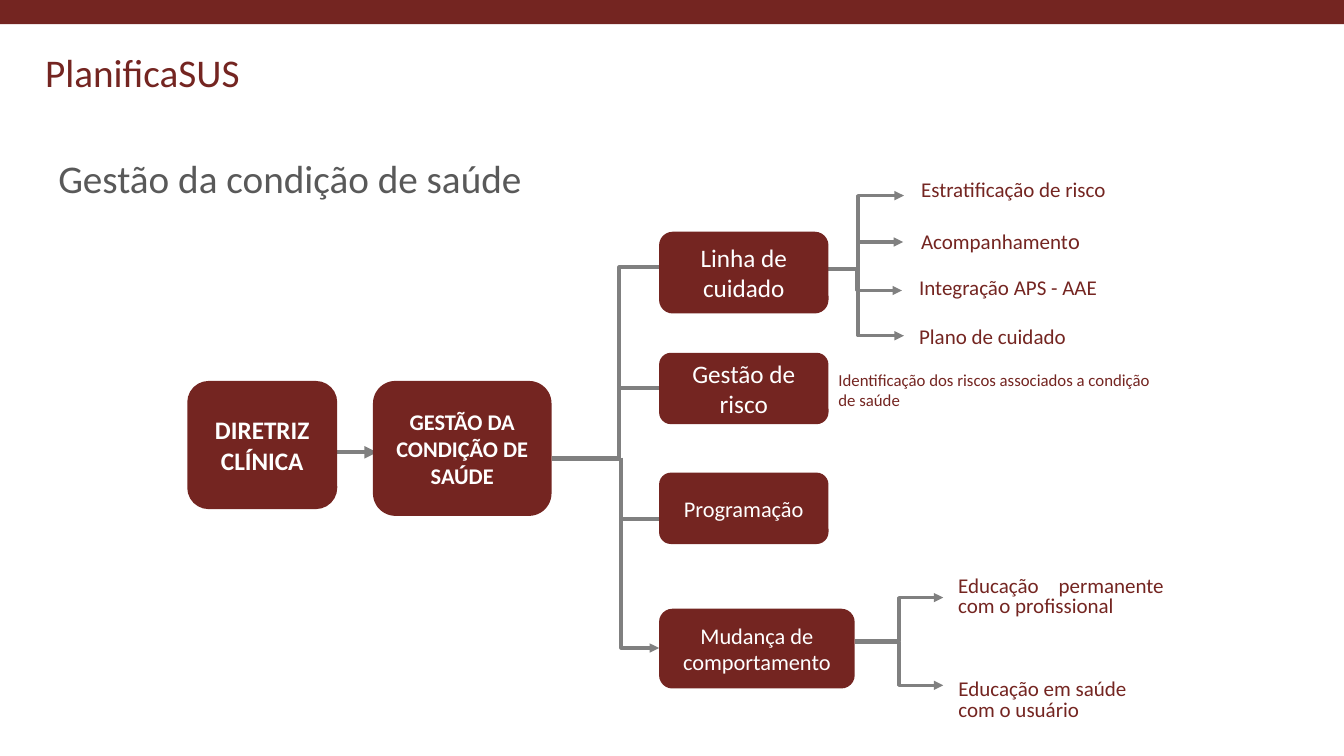
from dataclasses import dataclass

from lxml import etree
from pptx import Presentation
from pptx import util as u
from pptx.dml.color import RGBColor
from pptx.enum import shapes, text
from pptx.oxml.ns import qn


@dataclass(frozen=True)
class Theme:
    """Colours, font and type sizes."""
    font: str = "Calibri"
    wine: str = "742521"
    grey: str = "808080"
    dark: str = "595959"
    white: str = "FFFFFF"
    heading: int = 28
    large: int = 18
    medium: int = 16
    label: int = 15
    small: int = 12


def write(tf, runs, color, font, align="LEFT", bold=False, spacing=None,
          anchor="MIDDLE", wrap=True):
    """Write (text, size) runs as one formatted paragraph."""
    tf.word_wrap = wrap
    tf.vertical_anchor = getattr(text.MSO_ANCHOR, anchor)
    p = tf.paragraphs[0]
    p.alignment = getattr(text.PP_ALIGN, align)
    if spacing:
        p.line_spacing = spacing
    for content, size in runs:
        r = p.add_run()
        r.text = content
        r.font.name = font
        r.font.size = u.Pt(size)
        r.font.bold = bold
        r.font.color.rgb = RGBColor.from_string(color)


class Deck:
    """Hold the style and the current slide."""

    def __init__(self, prs, theme):
        self.theme = theme
        self.s = prs.slides.add_slide(prs.slide_layouts[6])

    def shape(self, kind, box, fill=None):
        """Add a borderless preset shape."""
        sp = self.s.shapes.add_shape(kind, *map(u.Cm, box))
        sp.shadow.inherit = False
        sp.line.fill.background()
        if fill:
            sp.fill.solid()
            sp.fill.fore_color.rgb = RGBColor.from_string(fill)
        else:
            sp.fill.background()
        return sp

    def bar(self, box):
        """Add the coloured band."""
        self.shape(shapes.MSO_SHAPE.RECTANGLE, box, self.theme.wine)

    def textbox(self, content, box, size, color, **fmt):
        """Add free text."""
        sp = self.s.shapes.add_textbox(*map(u.Cm, box))
        write(sp.text_frame, [(content, size)], color, self.theme.font, **fmt)

    def node(self, content, box, size, **fmt):
        """Add a filled box of the diagram."""
        sp = self.shape(shapes.MSO_SHAPE.ROUNDED_RECTANGLE, box, self.theme.wine)
        write(sp.text_frame, [(content, size)], self.theme.white,
              self.theme.font, align="CENTER", **fmt)

    def label(self, runs, box, **fmt):
        """Add an unfilled label at the end of a branch."""
        sp = self.shape(shapes.MSO_SHAPE.ROUNDED_RECTANGLE, box)
        write(sp.text_frame, runs, self.theme.wine, self.theme.font, **fmt)

    def arrow(self, start, end, bend=0.5, width=2.25):
        """Add an elbow arrow that turns at a share of its width."""
        cx = self.s.shapes.add_connector(
            shapes.MSO_CONNECTOR.ELBOW, *map(u.Cm, (*start, *end)))
        cx.line.width = u.Pt(width)
        cx.line.color.rgb = RGBColor.from_string(self.theme.grey)
        sp_pr = cx._element.spPr
        guides = sp_pr.find(qn("a:prstGeom")).get_or_add_avLst()
        etree.SubElement(guides, qn("a:gd"), name="adj1",
                         fmla=f"val {round(bend * 100000)}")
        etree.SubElement(cx.line._get_or_add_ln(), qn("a:tailEnd"), type="triangle")
        etree.SubElement(sp_pr, qn("a:effectLst"))


def main():
    """Build and save the slide."""
    prs = Presentation()
    prs.slide_width, prs.slide_height = u.Cm(33.87), u.Cm(19.05)
    t = Theme()
    d = Deck(prs, t)

    d.textbox("PlanificaSUS", (0.89, 1.09, 5.46, 1.45), t.heading, t.wine,
              anchor="TOP", wrap=False)
    d.bar((0, 0, 33.87, 0.61))
    d.textbox("Gestão da condição de saúde", (1.22, 2.72, 27.91, 3.68),
              t.heading, t.dark, spacing=0.9)

    d.arrow((7.47, 12.57), (9.5, 11.4), bend=0.37, width=3)
    for start, end, bend in (
        ((13.92, 11.58), (17.5, 6.73), 0.47),
        ((13.92, 11.58), (17.5, 13.08), 0.48),
        ((13.92, 11.53), (17.32, 9.78), 0.5),
        ((15.65, 11.53), (16.61, 16.33), 0),
        ((20.42, 6.78), (22.73, 7.32), 0.5),
        ((20.45, 6.76), (22.76, 6.1), 0.5),
        ((20.47, 6.78), (22.78, 8.46), 0.5),
        ((20.47, 6.76), (22.78, 4.93), 0.5),
        ((21.54, 16.15), (23.77, 15.06), 0.5),
        ((21.54, 16.18), (23.77, 17.27), 0.5),
    ):
        d.arrow(start, end, bend)

    d.node("DIRETRIZ CLÍNICA", (4.72, 9.6, 3.78, 3.23), t.large, bold=True)
    d.node("GESTÃO DA CONDIÇÃO DE SAÚDE", (9.4, 9.6, 4.5, 3.4), t.medium, bold=True)
    for content, top, width, height, size in (
        ("Linha de cuidado", 5.84, 4.27, 2.06, t.large),
        ("Gestão de risco", 8.89, 4.27, 1.8, t.large),
        ("Programação", 11.91, 4.27, 1.8, t.medium),
        ("Mudança de comportamento", 15.34, 4.93, 2.01, t.medium),
    ):
        d.node(content, (16.61, top, width, height), size)

    for runs, left, top, width in (
        ([("Estratificação de risco", t.label)], 22.91, 4.22, 6.58),
        ([("Acompanhament", t.label), ("o", t.medium)], 22.91, 5.51, 5.21),
        ([("Integração APS - AAE", t.label)], 22.86, 6.68, 6.27),
        ([("Plano de cuidado", t.label)], 22.86, 7.92, 5.94),
    ):
        d.label(runs, (left, top, width, 1.09))
    d.label([("Educação permanente com o profissional", t.label)],
            (23.77, 13.74, 5.94, 2.64), align="JUSTIFY", spacing=0.8)
    d.label([("Educação em saúde com o usuário", t.label)],
            (23.77, 16.28, 5.03, 2.77), spacing=0.8)
    d.textbox("Identificação dos riscos associados a condição de saúde",
              (20.88, 9.19, 8.61, 1.27), t.small, t.wine, anchor="TOP")

    prs.save("out.pptx")


if __name__ == "__main__":
    main()
